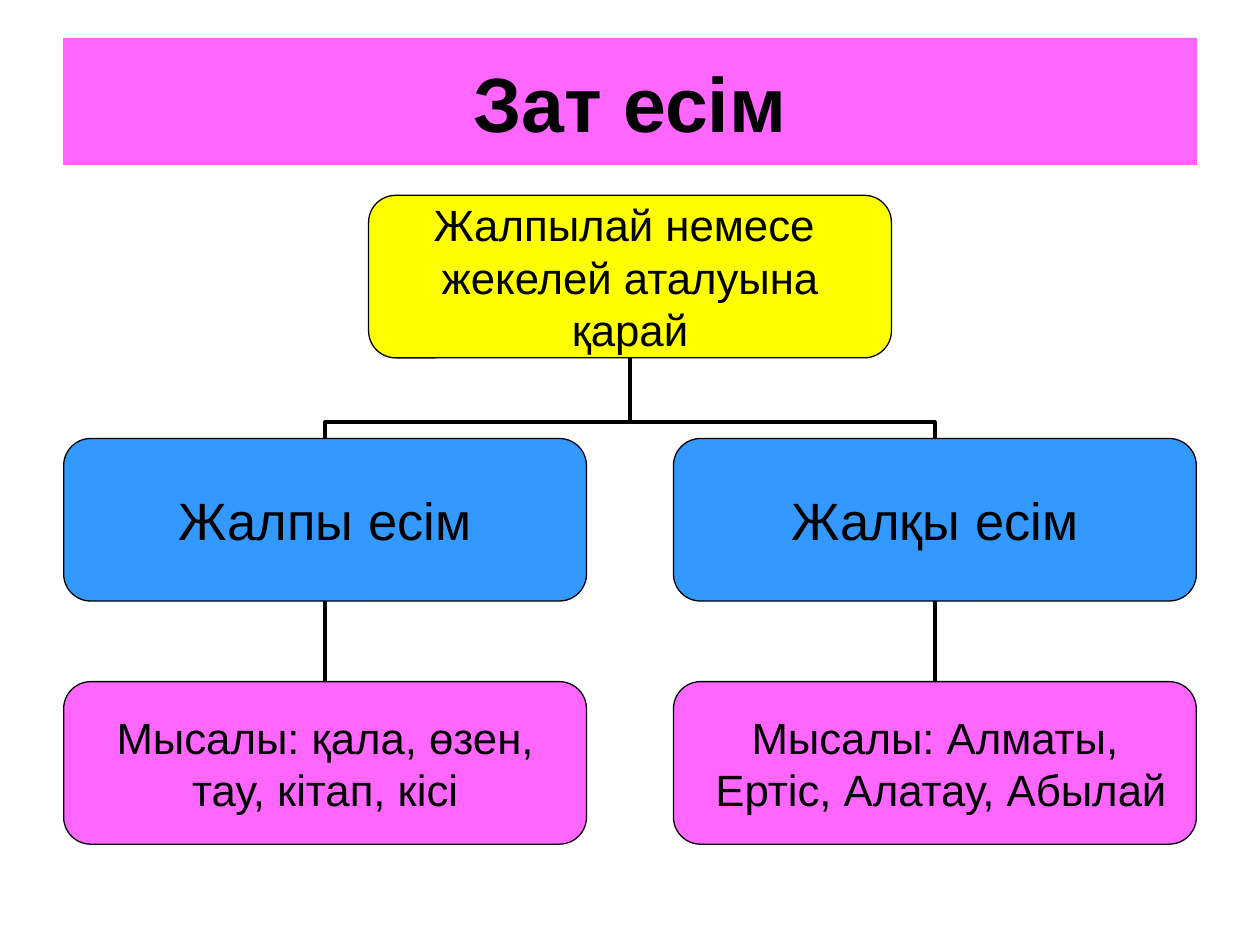
from dataclasses import dataclass

from lxml import etree
from pptx import Presentation
from pptx.dml.color import RGBColor
from pptx.enum import shapes, text
from pptx.oxml import ns
from pptx.util import Inches, Pt

COLORS = {"pink": "FF66FF", "yellow": "FFFF00", "blue": "3399FF", "black": "000000"}
BOX_WIDTH, BOX_HEIGHT = 4.15, 1.29
LEFT, CENTER, RIGHT = 2.58, 5, 7.42
ROWS = (1.55, 3.48, 5.41)
BEND = 0.2


@dataclass(frozen=True)
class Node:
    center: float
    row: int
    fill: str
    size: int
    lines: tuple[str, ...]

    @property
    def top(self) -> float:
        return ROWS[self.row]

    @property
    def bottom(self) -> float:
        return self.top + BOX_HEIGHT


ROOT = Node(CENTER, 0, "yellow", 25, ("Жалпылай немесе ", "жекелей аталуына", "қарай"))
BRANCHES = (
    Node(LEFT, 1, "blue", 30, ("Жалпы есім",)),
    Node(RIGHT, 1, "blue", 30, ("Жалқы есім",)),
)
EXAMPLES = (
    Node(LEFT, 2, "pink", 25, ("Мысалы: қала, өзен,", "тау, кітап, кісі")),
    Node(RIGHT, 2, "pink", 25, ("Мысалы: Алматы,", " Ертіс, Алатау, Абылай")),
)


def color(name: str) -> RGBColor:
    return RGBColor.from_string(COLORS[name])


def paint(shape, fill: str) -> None:
    shape.fill.solid()
    shape.fill.fore_color.rgb = color(fill)


def write(frame, lines: tuple[str, ...], size: int, bold: bool = False) -> None:
    frame.vertical_anchor = text.MSO_ANCHOR.MIDDLE
    for index, line in enumerate(lines):
        para = frame.add_paragraph() if index else frame.paragraphs[0]
        para.alignment = text.PP_ALIGN.CENTER
        span = para.add_run()
        span.text = line
        span.font.name = "Arial"
        span.font.size = Pt(size)
        span.font.bold = bold
        span.font.color.rgb = color("black")


def add_title(page, title: str) -> None:
    box = page.shapes.title
    box.left, box.top, box.width, box.height = map(Inches, (0.5, 0.3, 9, 1.01))
    paint(box, "pink")
    write(box.text_frame, (title,), 44, bold=True)


def add_link(page, kind, start: tuple[float, float], end: tuple[float, float]):
    link = page.shapes.add_connector(kind, *map(Inches, start + end))
    link.line.color.rgb = color("black")
    link.line.width = Pt(2.25)
    etree.SubElement(link._element.spPr, ns.qn("a:effectLst"))
    return link


def add_branch_link(page, child: Node, parent: Node) -> None:
    drop = child.top - parent.bottom
    run = abs(child.center - parent.center)
    middle_x = (child.center + parent.center) / 2
    middle_y = (child.top + parent.bottom) / 2
    on_right = child.center > parent.center
    reach = drop / 2 if on_right else -drop / 2
    link = add_link(
        page,
        shapes.MSO_CONNECTOR.ELBOW,
        (middle_x + reach, middle_y - run / 2),
        (middle_x - reach, middle_y + run / 2),
    )
    properties = link._element.spPr
    properties.find(ns.qn("a:xfrm")).set("rot", str((90 if on_right else 270) * 60000))
    geometry = properties.find(ns.qn("a:prstGeom"))
    guides = geometry.find(ns.qn("a:avLst"))
    if guides is None:
        guides = etree.SubElement(geometry, ns.qn("a:avLst"))
    etree.SubElement(guides, ns.qn("a:gd"), name="adj1", fmla=f"val {round(BEND * 100000)}")


def add_node(page, node: Node) -> None:
    box = page.shapes.add_shape(
        shapes.MSO_SHAPE.ROUNDED_RECTANGLE,
        Inches(node.center - BOX_WIDTH / 2),
        Inches(node.top),
        Inches(BOX_WIDTH),
        Inches(BOX_HEIGHT),
    )
    box.shadow.inherit = False
    paint(box, node.fill)
    box.line.color.rgb = color("black")
    box.line.width = Pt(0.75)
    frame = box.text_frame
    frame.margin_left = frame.margin_right = frame.margin_top = frame.margin_bottom = 0
    frame.word_wrap = False
    write(frame, node.lines, node.size)


def main() -> None:
    deck = Presentation()
    deck.slide_width, deck.slide_height = Inches(10), Inches(7.5)
    page = deck.slides.add_slide(deck.slide_layouts[5])
    add_title(page, "Зат есім")
    for branch, example in zip(BRANCHES, EXAMPLES):
        add_link(
            page,
            shapes.MSO_CONNECTOR.STRAIGHT,
            (example.center, example.top),
            (branch.center, branch.bottom),
        )
        add_branch_link(page, branch, ROOT)
    for node in (ROOT, *BRANCHES, *EXAMPLES):
        add_node(page, node)
    deck.save("out.pptx")


if __name__ == "__main__":
    main()
